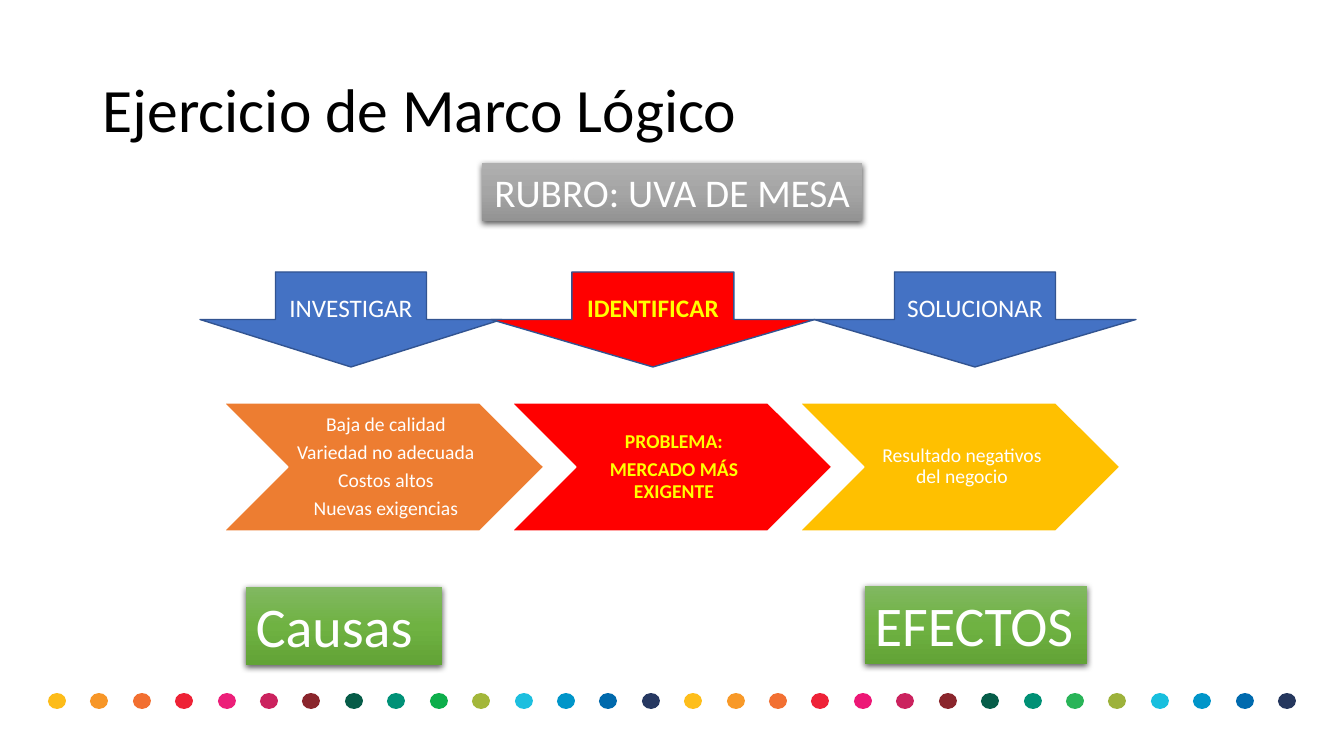
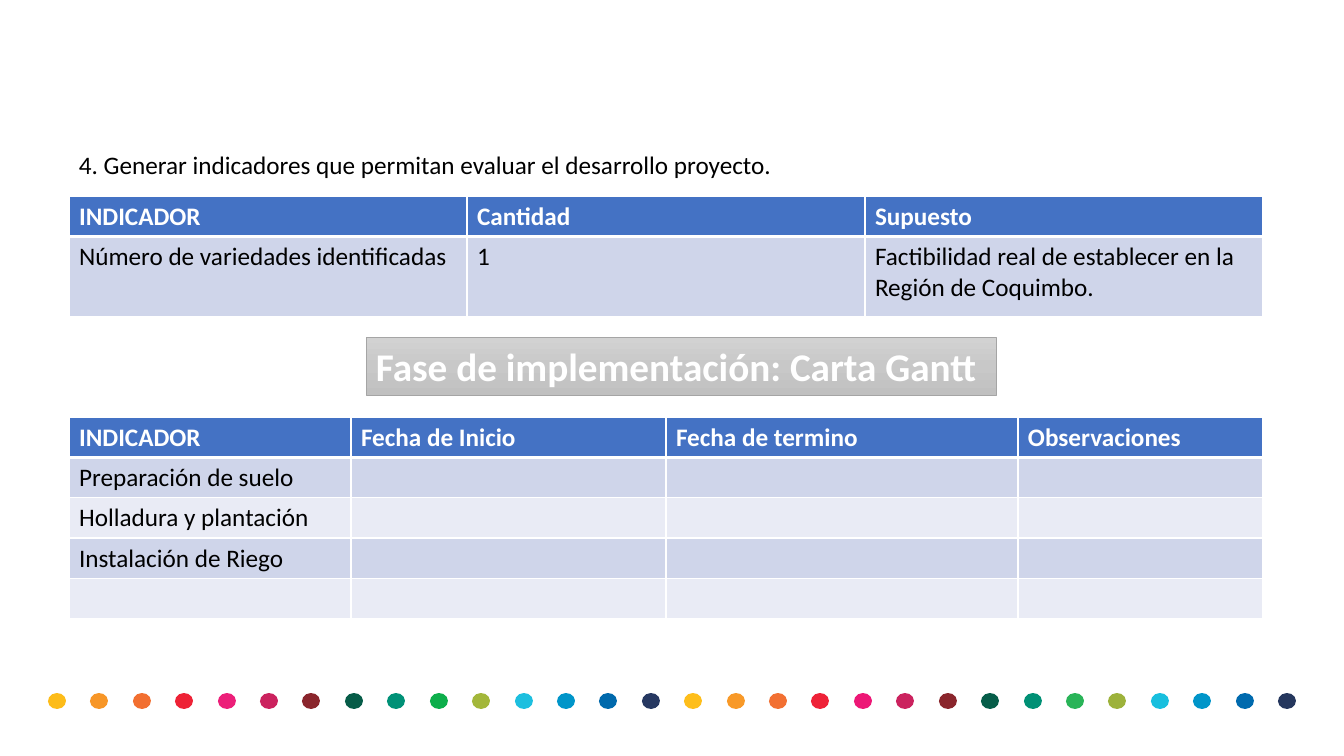
from copy import deepcopy
from dataclasses import dataclass

from pptx import Presentation
from pptx import util as u
from pptx.dml import color as c
from pptx.enum import shapes as s, text as t
from pptx.oxml import ns, parse_xml

PX = 12192000 / 1344


def px(length):
    return u.Emu(round(length * PX))


@dataclass(frozen=True)
class Box:
    left: int
    top: int
    width: int
    height: int

    def inner(self, left, top, width, height):
        """Box whose corner is counted from the corner of this one."""
        return Box(self.left + left, self.top + top, width, height)

    def emu(self):
        return [px(side) for side in (self.left, self.top, self.width, self.height)]


class Theme:
    font = "Calibri"
    black, white, yellow, red = "000000", "FFFFFF", "FFFF00", "FF0000"
    blue, blue_edge, orange, amber = "4472C4", "325491", "ED7D31", "FFC000"
    row_bands = ("CFD5EA", "E9EBF5")
    gray_edge = "A5A5A5"
    green_fade = ("81B861", "6FB242", "62A336")
    gray_fade = ("AFAFAF", "A5A5A5", "939393")
    pale_fade = ("D2D2D2", "C8C8C8", "C0C0C0")
    dots = (
        "FDBC19 F79627 F26F30 EE2236 EC1F79 CB225E 8A252C 065C48 009177 0DAE4B "
        "A3B73A 1DBFDF 0095C9 0069AC 263861 FEBE1B F89928 F27032 EE2238 ED1776 "
        "CB225E 8A252C 065D49 009075 29B458 9DB23B 18BFDE 0095C9 006AAE 25375D"
    ).split()
    title = {"size": 44, "color": black}
    body = {"size": 18, "color": black}
    table_head = {"size": 18, "color": white, "bold": True}
    arrow = {"size": 18, "color": white}
    arrow_key = {"size": 18, "color": yellow, "bold": True}
    step = {"size": 14, "color": white}
    step_key = {"size": 14, "color": yellow, "bold": True}
    label = {"size": 40, "color": white}
    banner = {"size": 28, "color": white}
    banner_bold = {"size": 28, "color": white, "bold": True}


def rgb(code):
    return c.RGBColor.from_string(code)


def write(frame, lines, look, frame_format=None, para_format=None):
    for name, value in {"word_wrap": True, **(frame_format or {})}.items():
        setattr(frame, name, value)
    for index, line in enumerate(lines):
        para = frame.add_paragraph() if index else frame.paragraphs[0]
        values = {"alignment": t.PP_ALIGN.LEFT, **(para_format or {})}
        for name, value in values.items():
            setattr(para, name, value)
        span = para.add_run()
        span.text = line
        font = {"name": Theme.font, "size": u.Pt(look["size"]),
                "bold": look.get("bold", False)}
        for name, value in font.items():
            setattr(span.font, name, value)
        span.font.color.rgb = rgb(look["color"])


def add_text(page, box, line, look, frame_format=None, para_format=None):
    text_box = page.shapes.add_textbox(*box.emu())
    write(text_box.text_frame, [line], look, frame_format, para_format)


def add_figure(page, kind, box, fill=None, edge=None, edge_width=1):
    figure = page.shapes.add_shape(kind, *box.emu())
    figure.shadow.inherit = False
    if fill:
        figure.fill.solid()
        figure.fill.fore_color.rgb = rgb(fill)
    if edge:
        figure.line.color.rgb = rgb(edge)
        figure.line.width = u.Pt(edge_width)
    else:
        figure.line.fill.background()
    return figure


def fade(figure, colors):
    """Fill from top to bottom with three evenly spaced colours."""
    figure.fill.gradient()
    figure.fill.gradient_angle = 270
    stop_list = figure.element.spPr.find(".//" + ns.qn("a:gsLst"))
    stop_list.insert(1, deepcopy(stop_list[0]))
    for index, (stop, code) in enumerate(zip(figure.fill.gradient_stops, colors)):
        stop.position = index / 2
        stop.color.rgb = rgb(code)


def cast_shadow(figure):
    effects = figure.element.spPr.find(ns.qn("a:effectLst"))
    effects.append(parse_xml(
        f'<a:outerShdw {ns.nsdecls("a")} blurRad="{u.Pt(4.5)}" dist="{u.Pt(1.5)}" '
        'dir="5400000" algn="ctr" rotWithShape="0"><a:srgbClr val="000000">'
        '<a:alpha val="63000"/></a:srgbClr></a:outerShdw>'))


def add_plate(page, box, line, look, colors, edge=None, align=t.PP_ALIGN.LEFT):
    """Shaded rectangle with one line; without an edge it casts a shadow."""
    plate = add_figure(page, s.MSO_SHAPE.RECTANGLE, box, edge=edge, edge_width=0.5)
    fade(plate, colors)
    if not edge:
        cast_shadow(plate)
    write(plate.text_frame, [line], look,
          {"vertical_anchor": t.MSO_ANCHOR.TOP}, {"alignment": align})


def add_dot_band(page, box):
    dot_width = 18
    pitch = (box.width - dot_width) / (len(Theme.dots) - 1)
    for index, code in enumerate(Theme.dots):
        place = box.inner(round(index * pitch), 0, dot_width, box.height)
        dot = add_figure(page, s.MSO_SHAPE.FLOWCHART_CONNECTOR, place, code)
        dot.rotation = 358


def add_arrows(page, box):
    arrows = [
        (0, 302, "INVESTIGAR", Theme.blue, Theme.arrow),
        (291, 324, "IDENTIFICAR", Theme.red, Theme.arrow_key),
        (614, 322, "SOLUCIONAR", Theme.blue, Theme.arrow),
    ]
    for left, width, line, fill, look in arrows:
        arrow = add_figure(page, s.MSO_SHAPE.DOWN_ARROW,
                           box.inner(left, 0, width, box.height), fill, Theme.blue_edge)
        write(arrow.text_frame, [line], look,
              {"vertical_anchor": t.MSO_ANCHOR.MIDDLE},
              {"alignment": t.PP_ALIGN.CENTER})


def add_steps(page, box):
    steps = [
        (["Baja de calidad", "Variedad no adecuada", "Costos altos",
          "Nuevas exigencias"], Theme.orange, Theme.step),
        (["PROBLEMA:", "MERCADO MÁS EXIGENTE"], Theme.red, Theme.step_key),
        (["Resultado negativos del negocio"], Theme.amber, Theme.step),
    ]
    width = 320
    pitch = (box.width - width) // (len(steps) - 1)
    frame_format = {"vertical_anchor": t.MSO_ANCHOR.MIDDLE, "margin_left": px(6),
                    "margin_top": px(2), "margin_right": px(2), "margin_bottom": px(2)}
    para_format = {"alignment": t.PP_ALIGN.CENTER, "line_spacing": 0.9,
                   "space_after": u.Pt(5)}
    for index, (lines, fill, look) in enumerate(steps):
        step = add_figure(page, s.MSO_SHAPE.CHEVRON,
                          box.inner(index * pitch, 0, width, box.height),
                          fill, Theme.white)
        write(step.text_frame, lines, look, frame_format, para_format)


def set_borders(cell, widths):
    """Draw white borders; widths are in points for left, right, top, bottom."""
    properties = cell._tc.get_or_add_tcPr()
    for index, (side, width) in enumerate(zip("LRTB", widths)):
        properties.insert(index, parse_xml(
            f'<a:ln{side} {ns.nsdecls("a")} w="{u.Pt(width)}"><a:solidFill>'
            f'<a:srgbClr val="{Theme.white}"/></a:solidFill></a:ln{side}>'))


def add_grid(page, box, widths, heights, rows):
    grid = page.shapes.add_table(len(heights), len(widths), *box.emu()).table
    for column, width in zip(grid.columns, widths):
        column.width = px(width)
    for row, height in zip(grid.rows, heights):
        row.height = px(height)
    for row_index, row in enumerate(grid.rows):
        header = row_index == 0
        fill = Theme.blue if header else Theme.row_bands[(row_index - 1) % 2]
        look = Theme.table_head if header else Theme.body
        lines = rows[row_index] if row_index < len(rows) else []
        for column_index, cell in enumerate(row.cells):
            cell.fill.solid()
            cell.fill.fore_color.rgb = rgb(fill)
            set_borders(cell, (1, 1, 3 if row_index == 1 else 1, 3 if header else 1))
            if column_index < len(lines):
                write(cell.text_frame, [lines[column_index]], look)


def new_page(deck):
    page = deck.slides.add_slide(deck.slide_layouts[6])
    add_dot_band(page, Box(48, 693, 1248, 16))
    return page


def build_framework(page, box):
    add_text(page, box.inner(93, 40, 806, 146), "Ejercicio de Marco Lógico",
             Theme.title, {"vertical_anchor": t.MSO_ANCHOR.MIDDLE},
             {"line_spacing": 0.9})
    add_steps(page, box.inner(224, 403, 896, 128))
    add_plate(page, box.inner(246, 587, 196, 78), "Causas", Theme.label,
              Theme.green_fade)
    add_plate(page, box.inner(865, 586, 222, 78), "EFECTOS", Theme.label,
              Theme.green_fade)
    add_arrows(page, box.inner(200, 272, 936, 95))
    add_plate(page, box.inner(482, 163, 380, 58), "RUBRO: UVA DE MESA",
              Theme.banner, Theme.gray_fade, align=t.PP_ALIGN.CENTER)


def build_indicators(page, box):
    add_text(page, box.inner(69, 144, 1206, 40),
             "4. Generar indicadores que permitan evaluar el desarrollo proyecto.",
             Theme.body)
    add_grid(page, box.inner(69, 196, 1194, 120), [398] * 3, [40, 80], [
        ["INDICADOR", "Cantidad", "Supuesto"],
        ["Número de variedades identificadas", "1",
         "Factibilidad real de establecer en la Región de Coquimbo."],
    ])
    add_plate(page, box.inner(366, 337, 630, 58),
              "Fase de implementación: Carta Gantt", Theme.banner_bold,
              Theme.pale_fade, Theme.gray_edge)
    add_grid(page, box.inner(69, 417, 1194, 200), [282, 315, 352, 245], [40] * 5, [
        ["INDICADOR", "Fecha de Inicio", "Fecha de termino", "Observaciones"],
        ["Preparación de suelo"],
        ["Holladura y plantación"],
        ["Instalación de Riego"],
    ])


def main():
    deck = Presentation()
    whole = Box(0, 0, 1344, 756)
    deck.slide_width, deck.slide_height = px(whole.width), px(whole.height)
    for build in (build_framework, build_indicators):
        build(new_page(deck), whole)
    deck.save("out.pptx")


if __name__ == "__main__":
    main()
